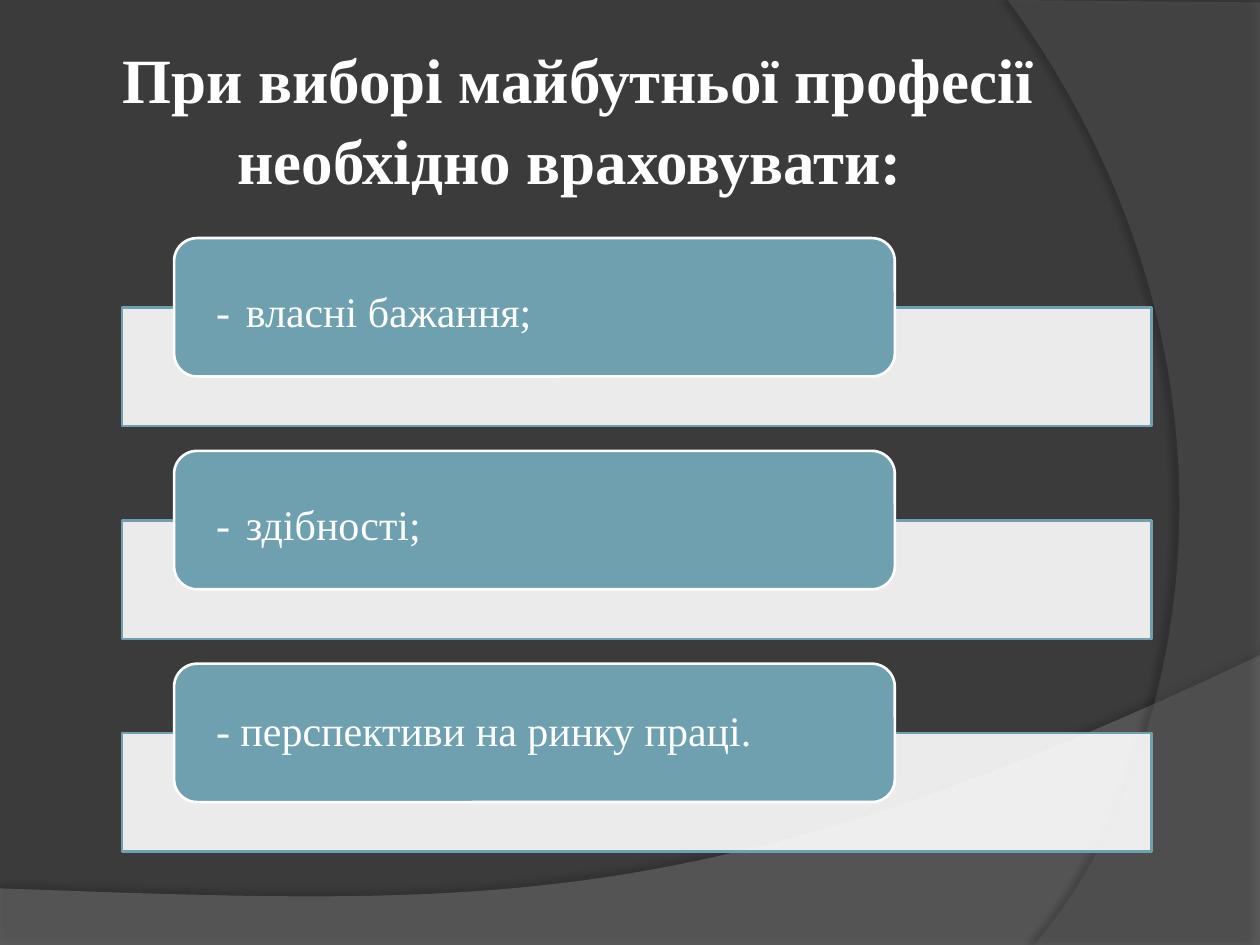
import pptx
import pptx.util
import pptx.dml.color
import pptx.enum.shapes
import pptx.enum.text
import pptx.oxml
import pptx.oxml.ns

Cm, Pt = pptx.util.Cm, pptx.util.Pt
SHAPE = pptx.enum.shapes.MSO_SHAPE
ALIGN = pptx.enum.text.PP_ALIGN
MIDDLE = pptx.enum.text.MSO_ANCHOR.MIDDLE
FONT = "Times New Roman"
WHITE, TEAL = "FFFFFF", "6EA0B0"
WIDTH, HEIGHT = 25.4, 19.05
ITEMS = ["власні бажання;", "здібності;", "перспективи на ринку праці."]
TOP, STEP = 4.8, 4.29


def color(code):
    return pptx.dml.color.RGBColor.from_string(code)


def style(target, values):
    for name, value in values.items():
        setattr(target, name, value)


def paint(shape, code, alpha=100):
    """Fill with a colour at an opacity in percent."""
    shape.shadow.inherit = False
    shape.fill.solid()
    shape.fill.fore_color.rgb = color(code)
    if alpha < 100:
        tint = shape.fill._xPr.find(".//" + pptx.oxml.ns.qn("a:srgbClr"))
        tint.append(pptx.oxml.parse_xml(
            f'<a:alpha {pptx.oxml.ns.nsdecls("a")} val="{alpha * 1000}"/>'))


def shade(shape, alpha, dist, angle):
    """Cast a soft black shadow; dist in points, angle in degrees."""
    effect = shape._element.spPr.find(pptx.oxml.ns.qn("a:effectLst"))
    effect.append(pptx.oxml.parse_xml(
        f'<a:outerShdw {pptx.oxml.ns.nsdecls("a")} blurRad="{Pt(4)}" '
        f'dist="{Pt(dist)}" dir="{angle * 60000}" algn="ctr" rotWithShape="0">'
        f'<a:srgbClr val="000000"><a:alpha val="{alpha * 1000}"/></a:srgbClr>'
        '</a:outerShdw>'))


def curve(start, pull, push, end, count=48):
    """Points along a cubic curve, without its start."""
    points = []
    for i in range(1, count + 1):
        t = i / count
        parts = ((1 - t) ** 3, 3 * t * (1 - t) ** 2, 3 * t * t * (1 - t), t ** 3)
        points.append(tuple(
            sum(part * spot[axis] for part, spot in zip(parts, (start, pull, push, end)))
            for axis in (0, 1)))
    return points


def add_wave(slide, points, code, alpha):
    places = [(Cm(x), Cm(y)) for x, y in points]
    maker = slide.shapes.build_freeform(*places[0])
    maker.add_line_segments(places[1:], close=True)
    wave = maker.convert_to_shape()
    paint(wave, code, alpha)
    wave.line.fill.background()
    return wave


def add_waves(slide):
    crest = (WIDTH, 13.21)
    low = [(0, 17.91), (0, HEIGHT), (WIDTH, HEIGHT), crest]
    low += curve(crest, (14.2, 18.52), (9.93, 18.26), low[0])
    shade(add_wave(slide, low, "7F7F7F", 45), 35, 3.5, 270)

    foot = (20.85, HEIGHT)
    side = [(WIDTH, 0.05), (WIDTH, HEIGHT), foot]
    side += curve(foot, (23.75, 15.72), (25.86, 7.62), (20.32, 0))
    shade(add_wave(slide, side, "5E5E5E", 40), 45, 4, 180)


def write(frame, text, align, size, bold=False):
    style(frame, dict(word_wrap=True, vertical_anchor=MIDDLE))
    line = frame.paragraphs[0]
    line.alignment = align
    run = line.add_run()
    run.text = text
    style(run.font, dict(name=FONT, size=Pt(size), bold=bold))
    run.font.color.rgb = color(WHITE)
    return line


def set_title(slide, text):
    title = slide.shapes.title
    slide.shapes._spTree.append(title._element)
    style(title, dict(left=Cm(1.27), top=Cm(0.76), width=Cm(20.75), height=Cm(3.18)))
    frame = title.text_frame
    frame.auto_size = pptx.enum.text.MSO_AUTO_SIZE.NONE
    edges = ("margin_left", "margin_top", "margin_right", "margin_bottom")
    style(frame, dict.fromkeys(edges, Cm(0.13)))
    write(frame, text, ALIGN.CENTER, 36, True).line_spacing = 1.06


def add_box(slide, kind, place, fill, edge, alpha=100):
    box = slide.shapes.add_shape(kind, *map(Cm, place))
    paint(box, fill, alpha)
    box.line.color.rgb = color(edge)
    box.line.width = Pt(1.5)
    return box


def add_item(slide, top, text, wide):
    """Add a pale bar with a label over it; wide enlarges the gap after the dash."""
    add_box(slide, SHAPE.RECTANGLE, (2.46, top + 1.4, 20.75, 2.39), WHITE, TEAL, 90)
    label = add_box(slide, SHAPE.ROUNDED_RECTANGLE, (3.51, top, 14.53, 2.79), TEAL, WHITE)
    frame = label.text_frame
    style(frame, dict(margin_left=Cm(0.71), margin_right=Cm(0.71),
                      margin_top=0, margin_bottom=0))
    pieces = [("-", 24), (" ", 36), (text, 24)] if wide else [("- " + text, 24)]
    for piece, size in pieces:
        line = write(frame, piece, ALIGN.LEFT, size)
    line.line_spacing = 0.9


def main():
    deck = pptx.Presentation()
    style(deck, dict(slide_width=Cm(WIDTH), slide_height=Cm(HEIGHT)))
    slide = deck.slides.add_slide(deck.slide_layouts[5])
    back = slide.background.fill
    back.solid()
    back.fore_color.rgb = color("3B3B3B")
    add_waves(slide)
    set_title(slide, "При виборі майбутньої професії необхідно враховувати: ")
    for row, text in enumerate(ITEMS):
        add_item(slide, TOP + row * STEP, text, row < 2)
    deck.save("out.pptx")


if __name__ == "__main__":
    main()
